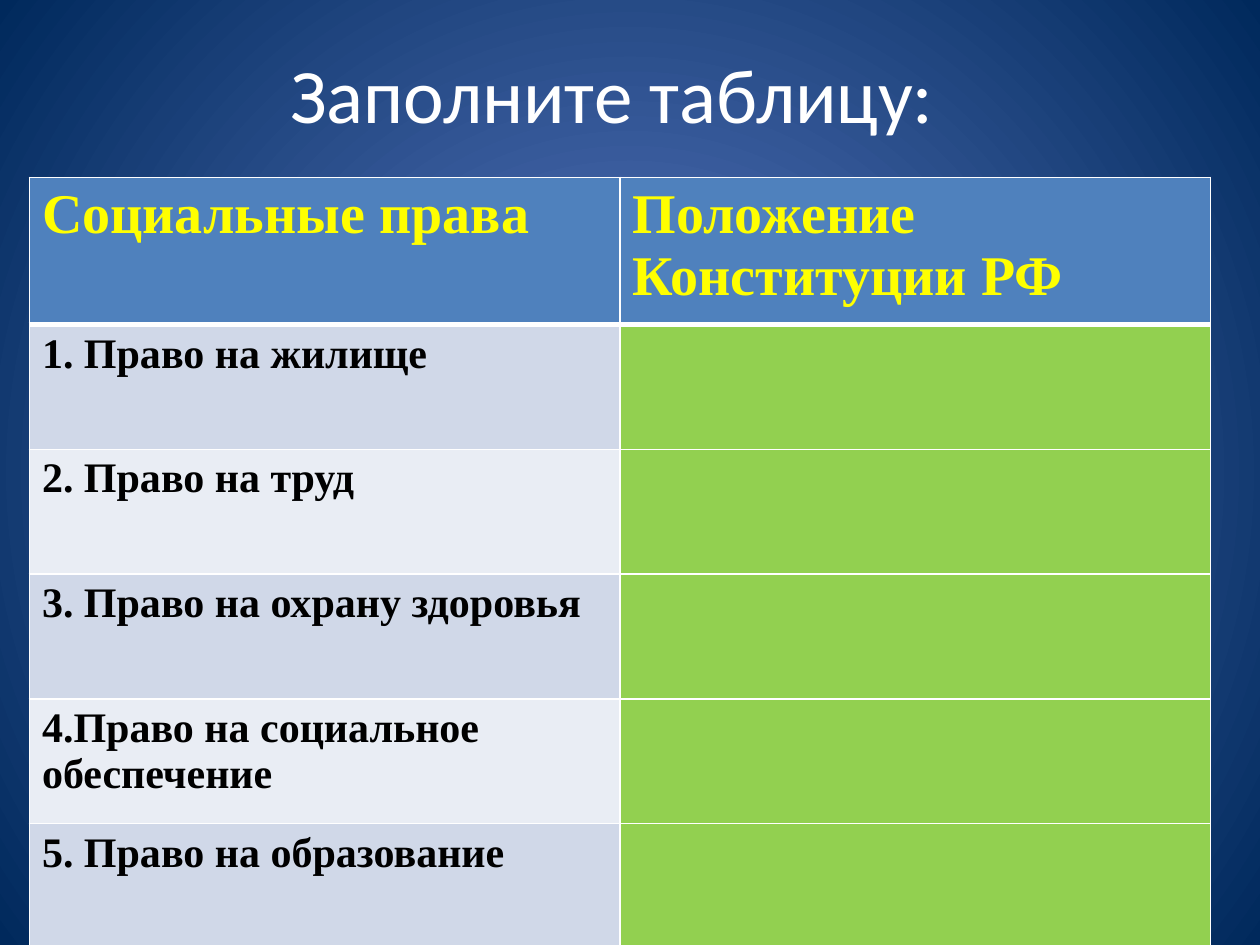
from lxml import etree
from pptx import Presentation
from pptx import util as u
from pptx.dml.color import RGBColor
from pptx.enum import text
from pptx.oxml import ns

WHITE = RGBColor(0xFF, 0xFF, 0xFF)
BLACK = RGBColor(0, 0, 0)
YELLOW = RGBColor(0xFF, 0xFF, 0)
HEADER_BLUE = RGBColor(0x4F, 0x81, 0xBD)
BANDS = (RGBColor(0xD0, 0xD8, 0xE8), RGBColor(0xE9, 0xED, 0xF4))
GREEN = RGBColor(0x92, 0xD0, 0x50)
GLOW = RGBColor(0x5E, 0x7C, 0xC5)
NAVY = RGBColor(0, 0x29, 0x5C)

HEADINGS = ("Социальные права", "Положение Конституции РФ")
RIGHTS = (
    "1. Право на жилище",
    "2. Право на труд",
    "3. Право на охрану здоровья",
    "4.Право на социальное обеспечение",
    "5. Право на образование",
)


def write(frame, words, font="Times New Roman", size=24, color=BLACK,
          bold=False, align=text.PP_ALIGN.LEFT):
    para = frame.paragraphs[0]
    para.alignment = align
    span = para.add_run()
    span.text = words
    span.font.name = font
    span.font.size = u.Pt(size)
    span.font.bold = bold
    span.font.color.rgb = color


class SlideBuilder:
    def __init__(self, page):
        self.page = page
        self.border = WHITE

    def background(self, center, edge):
        fill = self.page.background.fill
        fill.gradient()
        for stop, color, position in zip(fill.gradient_stops, (center, edge), (0, 1)):
            stop.color.rgb = color
            stop.position = position
        # Radial path in place of the linear direction
        gradient = next(self.page.element.iter(ns.qn("a:gradFill")))
        gradient.remove(gradient.find(ns.qn("a:lin")))
        radial = etree.SubElement(gradient, ns.qn("a:path"), path="circle")
        etree.SubElement(radial, ns.qn("a:fillToRect"),
                         l="50000", t="50000", r="50000", b="50000")

    def title(self, words, left, top, width, height):
        box = self.page.shapes.add_textbox(
            u.Pt(left), u.Pt(top), u.Pt(width), u.Pt(height))
        frame = box.text_frame
        frame.word_wrap = True
        frame.vertical_anchor = text.MSO_ANCHOR.MIDDLE
        write(frame, words, font="Calibri", size=44, color=WHITE,
              align=text.PP_ALIGN.CENTER)

    def cell(self, cell, fill, words="", top=1, bottom=1, **style):
        cell.fill.solid()
        cell.fill.fore_color.rgb = fill
        if words:
            write(cell.text_frame, words, bold=True, **style)
        # Borders precede the fill in the cell properties
        properties = cell._tc.get_or_add_tcPr()
        sides = (("L", 1), ("R", 1), ("T", top), ("B", bottom))
        for index, (side, width) in enumerate(sides):
            line = etree.Element(ns.qn(f"a:ln{side}"), w=str(u.Pt(width)))
            solid = etree.SubElement(line, ns.qn("a:solidFill"))
            etree.SubElement(solid, ns.qn("a:srgbClr"), val=str(self.border))
            properties.insert(index, line)

    def table(self, headings, labels, left, top, width, header_height, row_height):
        height = header_height + row_height * len(labels)
        grid = self.page.shapes.add_table(
            len(labels) + 1, len(headings),
            u.Pt(left), u.Pt(top), u.Pt(width), u.Pt(height)).table
        for row in grid.rows:
            row.height = u.Pt(row_height)
        grid.rows[0].height = u.Pt(header_height)
        for column, heading in enumerate(headings):
            self.cell(grid.cell(0, column), HEADER_BLUE, heading,
                      bottom=3, size=32, color=YELLOW)
        for row, label in enumerate(labels, start=1):
            edge = 3 if row == 1 else 1
            self.cell(grid.cell(row, 0), BANDS[(row - 1) % 2], label, top=edge)
            self.cell(grid.cell(row, 1), GREEN, top=edge)


def main():
    deck = Presentation()
    deck.slide_width, deck.slide_height = u.Pt(720), u.Pt(540)
    builder = SlideBuilder(deck.slides.add_slide(deck.slide_layouts[6]))

    # Backdrop and title
    builder.background(GLOW, NAVY)
    builder.title("Заполните таблицу:", 36, 21.6, 627.84, 62.64)

    # Table of rights, with the second column left to fill in
    builder.table(HEADINGS, RIGHTS, left=16.8, top=101.4, width=675,
                  header_height=82, row_height=71.3)

    deck.save("out.pptx")


if __name__ == "__main__":
    main()
